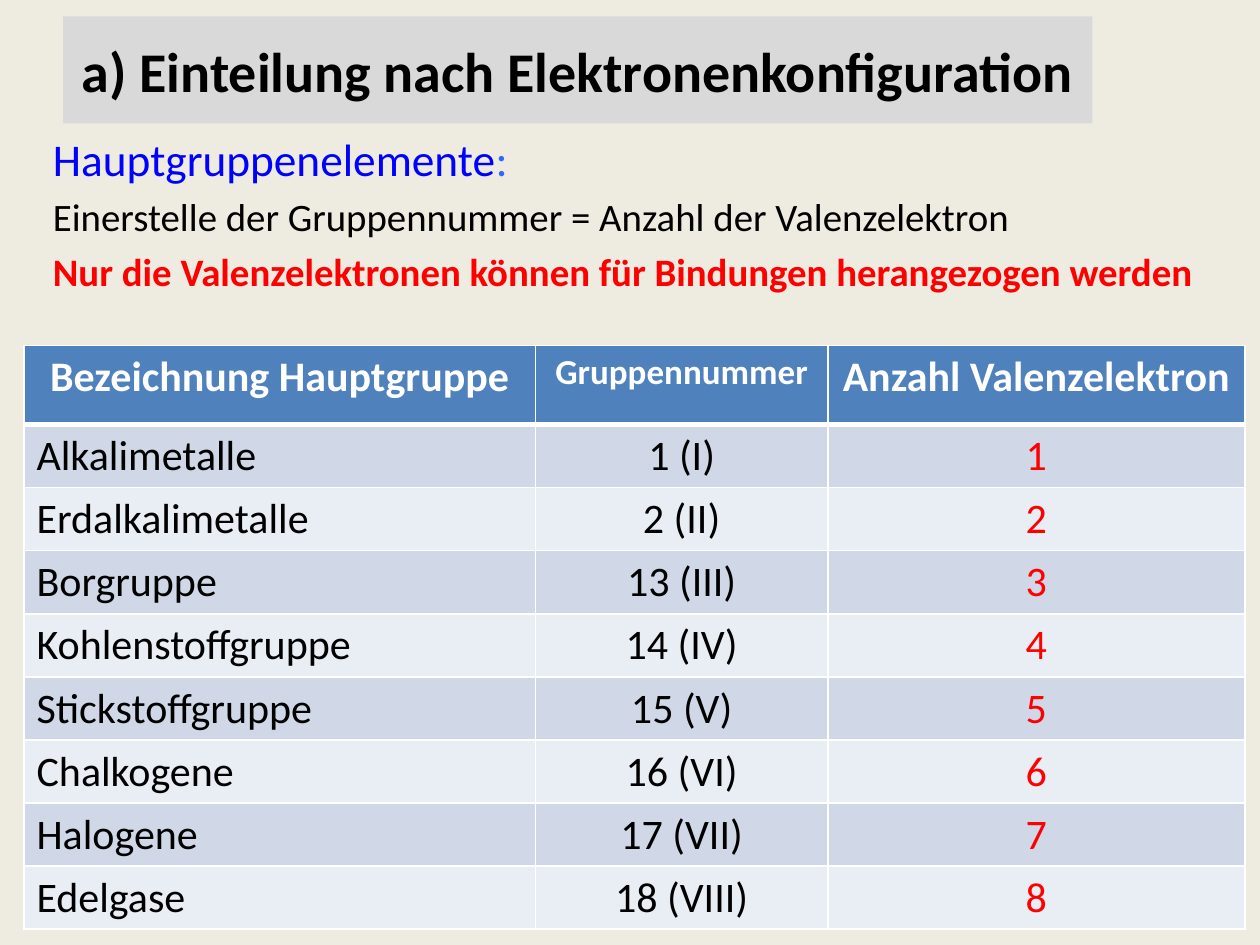
import pptx
import pptx.util
import pptx.dml.color
import pptx.enum.text
import pptx.oxml
import pptx.oxml.ns
from lxml import etree

Inches = pptx.util.Inches
Pt = pptx.util.Pt
ALIGN = pptx.enum.text.PP_ALIGN
FONT = "Calibri"

COLORS = {
    "background": "EEECE1", "banner": "D9D9D9", "black": "000000",
    "white": "FFFFFF", "blue": "0000FF", "light_blue": "3366FF",
    "red": "FF0000", "header": "4F81BD", "odd": "D0D8E8", "even": "E9EDF4",
}

HEADING = "a) Einteilung nach Elektronenkonfiguration"
STATEMENTS = [
    (25.9, False, [("Hauptgruppenelemente", "blue"), (":", "light_blue")]),
    (22.2, False, [("Einerstelle der Gruppennummer = Anzahl der Valenzelektron", "black")]),
    (22.2, True, [("Nur die Valenzelektronen können für Bindungen herangezogen werden", "red")]),
]
COLUMNS = [
    ("Bezeichnung Hauptgruppe", 4.06, 24, ALIGN.LEFT, "black"),
    ("Gruppennummer", 2.32, 20, ALIGN.CENTER, "black"),
    ("Anzahl Valenzelektron", 3.31, 24, ALIGN.CENTER, "red"),
]
GROUPS = [
    ("Alkalimetalle", "1 (I)", "1"),
    ("Erdalkalimetalle", "2 (II)", "2"),
    ("Borgruppe", "13 (III)", "3"),
    ("Kohlenstoffgruppe", "14 (IV)", "4"),
    ("Stickstoffgruppe", "15 (V)", "5"),
    ("Chalkogene", "16 (VI)", "6"),
    ("Halogene", "17 (VII)", "7"),
    ("Edelgase", "18 (VIII)", "8"),
]
HEADER_HEIGHT, ROW_HEIGHT = 0.63, 0.5


def rgb(name):
    return pptx.dml.color.RGBColor.from_string(COLORS[name])


def style_run(run, size, color, bold=False):
    run.font.name = FONT
    run.font.size = Pt(size)
    run.font.bold = bold
    run.font.color.rgb = rgb(color)


def fill(part, color):
    part.fill.solid()
    part.fill.fore_color.rgb = rgb(color)


def add_borders(cell, widths):
    properties = cell._tc.get_or_add_tcPr()
    for position, (side, width) in enumerate(widths.items()):
        line = etree.Element(pptx.oxml.ns.qn("a:ln" + side), w=str(Pt(width)))
        solid = etree.SubElement(line, pptx.oxml.ns.qn("a:solidFill"))
        etree.SubElement(solid, pptx.oxml.ns.qn("a:srgbClr"), val=COLORS["white"])
        properties.insert(position, line)


def fill_cell(cell, text, size, align, color, background, bold, widths):
    cell.text_frame.text = text
    paragraph = cell.text_frame.paragraphs[0]
    paragraph.alignment = align
    style_run(paragraph.runs[0], size, color, bold)
    fill(cell, background)
    add_borders(cell, widths)


def add_heading(slide):
    heading = slide.shapes.title
    heading.left, heading.top = Inches(0.5), Inches(0.13)
    heading.width, heading.height = Inches(8.17), Inches(0.85)
    fill(heading, "banner")
    heading.text_frame.text = HEADING
    heading.text_frame.vertical_anchor = pptx.enum.text.MSO_ANCHOR.MIDDLE
    paragraph = heading.text_frame.paragraphs[0]
    paragraph.alignment = ALIGN.CENTER
    style_run(paragraph.runs[0], 32, "black", True)


def add_statements(slide):
    box = slide.shapes.add_textbox(Inches(0.28), Inches(0.99), Inches(9.53), Inches(1.73))
    frame = box.text_frame
    frame.word_wrap = True
    frame.margin_left = Inches(0.14)
    for index, (size, bold, parts) in enumerate(STATEMENTS):
        paragraph = frame.add_paragraph() if index else frame.paragraphs[0]
        paragraph.space_before = Pt(round(size * 0.2, 1))
        for text, color in parts:
            run = paragraph.add_run()
            run.text = text
            style_run(run, size, color, bold)


def add_group_table(slide):
    width = sum(column[1] for column in COLUMNS)
    height = HEADER_HEIGHT + ROW_HEIGHT * len(GROUPS)
    table = slide.shapes.add_table(
        len(GROUPS) + 1, len(COLUMNS),
        Inches(0.19), Inches(2.74), Inches(width), Inches(height)).table
    for row in table.rows:
        row.height = Inches(ROW_HEIGHT)
    table.rows[0].height = Inches(HEADER_HEIGHT)
    thin = {"L": 1, "R": 1, "T": 1, "B": 1}
    for col, (label, column_width, size, align, color) in enumerate(COLUMNS):
        table.columns[col].width = Inches(column_width)
        fill_cell(table.cell(0, col), label, size, ALIGN.CENTER, "white",
                  "header", True, {**thin, "B": 3})
        for row, group in enumerate(GROUPS, start=1):
            fill_cell(table.cell(row, col), group[col], 24, align, color,
                      "odd" if row % 2 else "even", False,
                      {**thin, "T": 3 if row == 1 else 1})


def main():
    presentation = pptx.Presentation()
    presentation.slide_width = Inches(10)
    presentation.slide_height = Inches(7.5)
    slide = presentation.slides.add_slide(presentation.slide_layouts[5])
    fill(slide.background, "background")
    add_heading(slide)
    add_statements(slide)
    add_group_table(slide)
    presentation.save("out.pptx")


if __name__ == "__main__":
    main()
